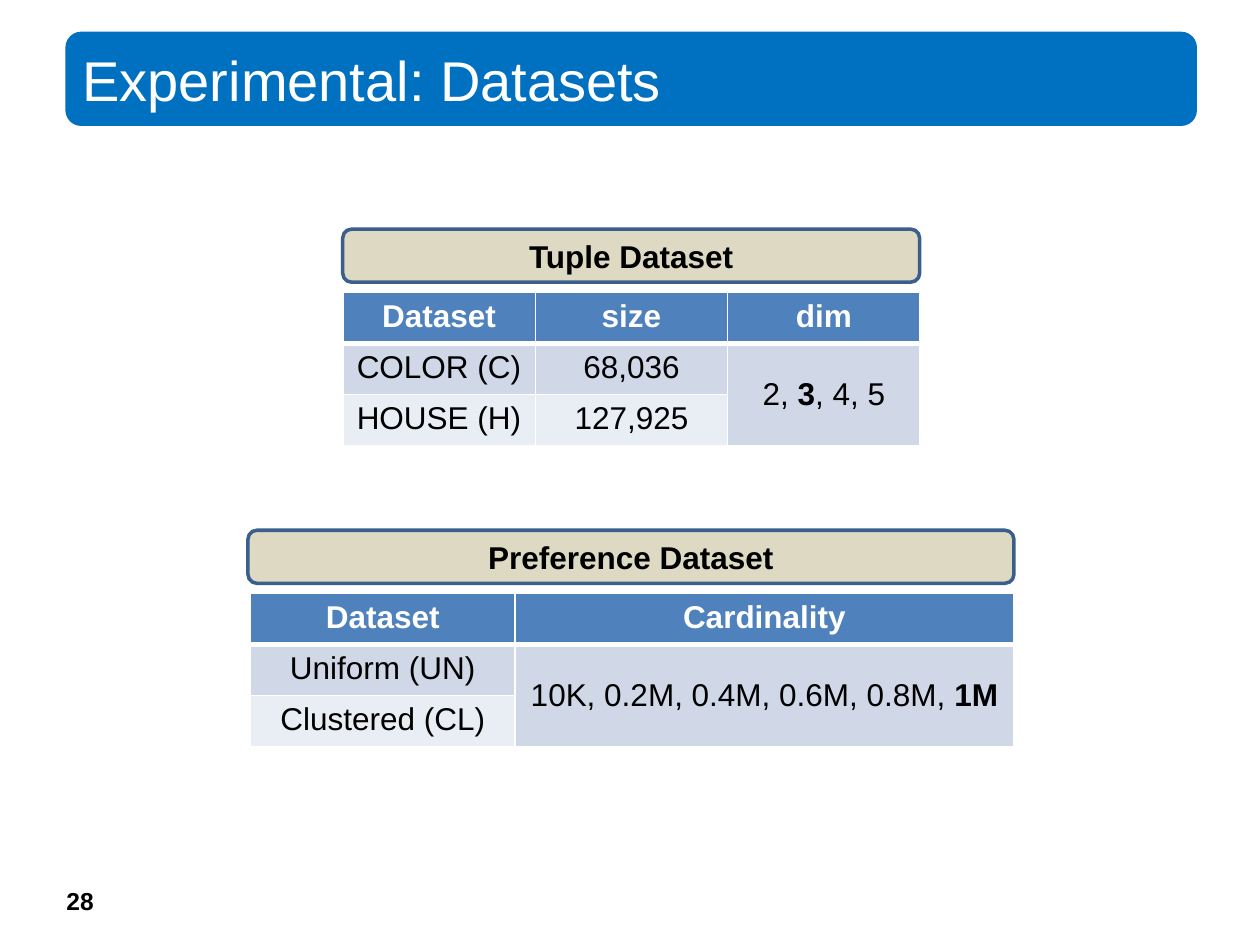
from lxml import etree
from pptx import Presentation
from pptx.dml.color import RGBColor
from pptx.enum.shapes import MSO_SHAPE
from pptx.enum.text import MSO_ANCHOR, PP_ALIGN
from pptx.oxml.ns import qn
from pptx.util import Cm, Pt

WHITE = RGBColor(0xFF, 0xFF, 0xFF)
BLACK = RGBColor(0x00, 0x00, 0x00)
TITLE_BLUE = RGBColor(0x00, 0x70, 0xC0)
HEADER_BLUE = RGBColor(0x4F, 0x81, 0xBD)
BAND_DARK = RGBColor(0xD0, 0xD8, 0xE8)
BAND_LIGHT = RGBColor(0xE9, 0xED, 0xF4)
BEIGE = RGBColor(0xDD, 0xD9, 0xC3)
OUTLINE_BLUE = RGBColor(0x3A, 0x5F, 0x8C)
ROW_FILLS = [HEADER_BLUE, BAND_DARK, BAND_LIGHT]


def write(text_frame, pieces, size, color, alignment=PP_ALIGN.CENTER):
    """Write (text, bold) pieces as the runs of one paragraph."""
    paragraph = text_frame.paragraphs[0]
    paragraph.alignment = alignment
    for text, bold in pieces:
        run = paragraph.add_run()
        run.text = text
        run.font.name = "Arial"
        run.font.size = Pt(size)
        run.font.bold = bold
        run.font.color.rgb = color


def add_border(cell, side, width):
    properties = cell._tc.get_or_add_tcPr()
    line = etree.SubElement(properties, qn(f"a:ln{side}"), w=str(Pt(width)))
    fill = etree.SubElement(line, qn("a:solidFill"))
    etree.SubElement(fill, qn("a:srgbClr"), val=str(WHITE))


presentation = Presentation()
presentation.slide_width = Cm(25.4)
presentation.slide_height = Cm(19.05)
slide = presentation.slides.add_slide(presentation.slide_layouts[6])

# Page number
page_number = slide.shapes.add_textbox(Cm(1.09), Cm(17.73), Cm(1.2), Cm(0.86))
page_number.text_frame.word_wrap = True
write(page_number.text_frame, [("28", True)], 14, BLACK, PP_ALIGN.LEFT)

# Title bar and table captions: left, top, width, height, fill, text, size
bars = [
    (1.32, 0.64, 22.81, 1.9, TITLE_BLUE, "Experimental: Datasets", 32),
    (6.91, 4.62, 11.63, 1.07, BEIGE, "Tuple Dataset", 18),
    (5, 10.69, 15.44, 1.07, BEIGE, "Preference Dataset", 18),
]
for left, top, width, height, color, text, size in bars:
    is_title = color == TITLE_BLUE
    shape = slide.shapes.add_shape(
        MSO_SHAPE.ROUNDED_RECTANGLE, Cm(left), Cm(top), Cm(width), Cm(height))
    shape.shadow.inherit = False
    shape.fill.solid()
    shape.fill.fore_color.rgb = color
    if is_title:
        shape.line.fill.background()
    else:
        shape.line.color.rgb = OUTLINE_BLUE
        shape.line.width = Pt(2)
    shape.text_frame.vertical_anchor = MSO_ANCHOR.MIDDLE
    write(shape.text_frame, [(text, not is_title)], size,
          WHITE if is_title else BLACK,
          PP_ALIGN.LEFT if is_title else PP_ALIGN.CENTER)

# Tables: left, top, column widths, rows, pieces of the merged last column
tables = [
    (6.91, 5.89, [3.88, 3.88, 3.88],
     [["Dataset", "size", "dim"],
      ["COLOR (C)", "68,036"],
      ["HOUSE (H)", "127,925"]],
     [("2, ", False), ("3", True), (", 4, 5", False)]),
    (5.05, 11.96, [5.33, 10.06],
     [["Dataset", "Cardinality"],
      ["Uniform (UN)"],
      ["Clustered (CL)"]],
     [("10K, 0.2M, 0.4M, 0.6M, 0.8M, ", False), ("1M", True)]),
]
for left, top, column_widths, rows, merged_pieces in tables:
    table = slide.shapes.add_table(
        len(rows), len(column_widths), Cm(left), Cm(top),
        Cm(sum(column_widths)), Cm(3.09)).table
    for column, width in zip(table.columns, column_widths):
        column.width = Cm(width)

    # Borders and fills, with a thick rule under the header
    for row_index, color in enumerate(ROW_FILLS):
        table.rows[row_index].height = Cm(1.03)
        for cell in table.rows[row_index].cells:
            for side in "LRTB":
                under_header = (row_index, side) in [(0, "B"), (1, "T")]
                add_border(cell, side, 3 if under_header else 1)
            cell.fill.solid()
            cell.fill.fore_color.rgb = color

    # Cell texts
    for row_index, texts in enumerate(rows):
        is_header = row_index == 0
        for column_index, text in enumerate(texts):
            write(table.cell(row_index, column_index).text_frame,
                  [(text, is_header)], 18, WHITE if is_header else BLACK)

    # Last column spans both data rows
    last_column = len(column_widths) - 1
    merged = table.cell(1, last_column)
    merged.merge(table.cell(2, last_column))
    merged.vertical_anchor = MSO_ANCHOR.MIDDLE
    write(merged.text_frame, merged_pieces, 18, BLACK)

presentation.save("out.pptx")
